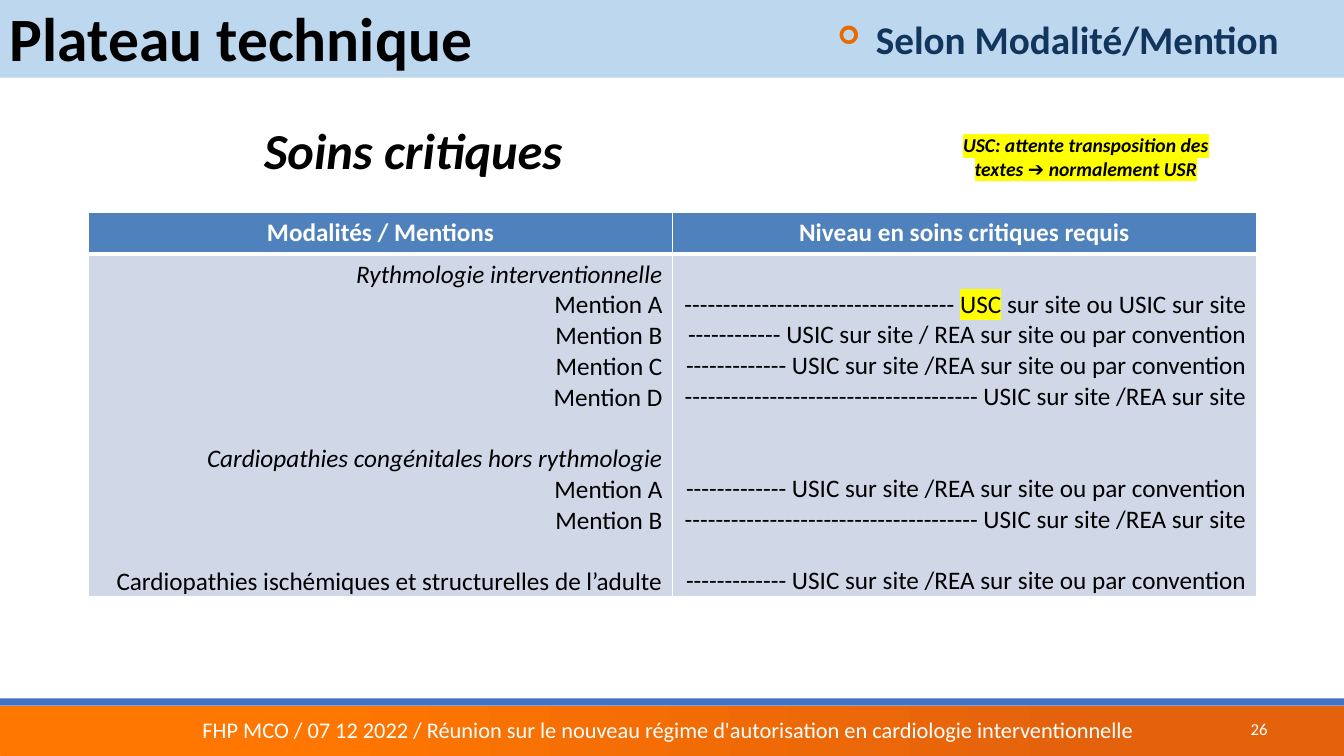
from lxml.etree import SubElement
from pptx import Presentation
from pptx.dml.color import RGBColor
from pptx.enum.shapes import MSO_SHAPE
from pptx.enum.text import MSO_ANCHOR, PP_ALIGN
from pptx.oxml import parse_xml
from pptx.oxml.ns import nsdecls, qn
from pptx.util import Inches, Pt

COLORS = {
    "white": "FFFFFF", "black": "000000", "navy": "12355D",
    "sky": "BDD7EE", "blue": "4472C4", "header": "4F81BD", "body": "D0D8E8",
    "orange": "FF7600", "rust": "E4620C", "bullet": "E96A00", "yellow": "FFFF00",
}
LINE = 22
CONVENTION = "------------- USIC sur site /REA sur site ou par convention"
ON_SITE = "-------------------------------------- USIC sur site /REA sur site"
MENTIONS = [
    ("Rythmologie interventionnelle", 0, True),
    ("Mention A", 0, False),
    ("Mention B", 0, False),
    ("Mention C", 0, False),
    ("Mention D", 0, False),
    ("Cardiopathies congénitales hors rythmologie", 1, True),
    ("Mention A", 0, False),
    ("Mention B", 0, False),
    ("Cardiopathies ischémiques et structurelles de l’adulte", 1, False),
]
LEVELS = [
    ("------------ USIC sur site / REA sur site ou par convention", 0),
    (CONVENTION, 0),
    (ON_SITE, 0),
    (CONVENTION, 2),
    (ON_SITE, 0),
    (CONVENTION, 1),
]


def rgb(name):
    return RGBColor.from_string(COLORS[name])


def add_run(p, text, size=18, color="black", bold=False, italic=False, highlight=None):
    r = p.add_run()
    r.text = text
    r.font.size = Pt(size)
    r.font.bold = bold
    r.font.italic = italic
    r.font.color.rgb = rgb(color)
    if highlight:
        mark = SubElement(r.font._element, qn("a:highlight"))
        SubElement(mark, qn("a:srgbClr"), val=COLORS[highlight])
    r.font.name = "Calibri"


def add_text(s, text, box, align=PP_ALIGN.LEFT, anchor=MSO_ANCHOR.TOP, **font):
    tf = s.shapes.add_textbox(*map(Inches, box)).text_frame
    tf.word_wrap = True
    tf.vertical_anchor = anchor
    p = tf.paragraphs[0]
    p.alignment = align
    add_run(p, text, **font)
    return p


def add_bullet(p, char, color):
    pPr = p._p.get_or_add_pPr()
    pPr.set("marL", str(Inches(0.69)))
    pPr.set("indent", str(Inches(-0.38)))
    SubElement(SubElement(pPr, qn("a:buClr")), qn("a:srgbClr"), val=COLORS[color])
    SubElement(pPr, qn("a:buSzPct"), val="65000")
    SubElement(pPr, qn("a:buFont"), typeface="Wingdings")
    SubElement(pPr, qn("a:buChar"), char=char)


def add_bar(s, box, color, shape=MSO_SHAPE.RECTANGLE):
    sp = s.shapes.add_shape(shape, *map(Inches, box))
    sp.shadow.inherit = False
    sp.line.fill.background()
    sp.fill.solid()
    sp.fill.fore_color.rgb = rgb(color)
    return sp


def add_footer_band(s):
    sp = add_bar(s, (0, 7, 13.33, 0.5), "orange", MSO_SHAPE.ROUNDED_RECTANGLE)
    sp.adjustments[0] = 0.02
    sp.fill.gradient()
    sp.fill.gradient_angle = 0
    stops = [(0.23, "orange"), (0.81, "rust")]
    for stop, (position, color) in zip(sp.fill.gradient_stops, stops):
        stop.position = position
        stop.color.rgb = rgb(color)


def format_cell(cell, color, bottom=1):
    cell.fill.solid()
    cell.fill.fore_color.rgb = rgb(color)
    tcPr = cell._tc.get_or_add_tcPr()
    widths = {"lnL": 1, "lnR": 1, "lnT": 1, "lnB": bottom}
    for i, (side, width) in enumerate(widths.items()):
        tcPr.insert(i, parse_xml(
            f'<a:{side} {nsdecls("a")} w="{Pt(width)}"><a:solidFill>'
            f'<a:srgbClr val="{COLORS["white"]}"/></a:solidFill></a:{side}>'))


def add_line(tf, first=False, gap=0):
    p = tf.paragraphs[0] if first else tf.add_paragraph()
    p.alignment = PP_ALIGN.RIGHT
    if gap:
        p.space_before = Pt(gap * LINE)
    return p


def add_care_table(s):
    box = map(Inches, (0.88, 2.11, 11.58, 3.81))
    table = s.shapes.add_table(2, 2, *box).table
    table.rows[0].height = Inches(0.41)
    table.rows[1].height = Inches(3.4)
    titles = ("Modalités / Mentions", "Niveau en soins critiques requis")
    for col, title in enumerate(titles):
        head, body = table.cell(0, col), table.cell(1, col)
        format_cell(head, "header", bottom=3)
        format_cell(body, "body")
        body.margin_bottom = 0
        p = head.text_frame.paragraphs[0]
        p.alignment = PP_ALIGN.CENTER
        add_run(p, title, color="white", bold=True)

    tf = table.cell(1, 0).text_frame
    for i, (text, gap, italic) in enumerate(MENTIONS):
        add_run(add_line(tf, i == 0, gap), text, italic=italic)

    levels = table.cell(1, 1)
    levels.vertical_anchor = MSO_ANCHOR.BOTTOM
    tf = levels.text_frame
    p = add_line(tf, first=True)
    add_run(p, "----------------------------------- ")
    add_run(p, "USC", highlight="yellow")
    add_run(p, " sur site ou USIC sur site")
    for text, gap in LEVELS:
        add_run(add_line(tf, gap=gap), text)


def main():
    prs = Presentation()
    prs.slide_width = Inches(13.33)
    prs.slide_height = Inches(7.5)
    s = prs.slides.add_slide(prs.slide_layouts[6])

    add_footer_band(s)
    add_text(s, "FHP MCO / 07 12 2022 / Réunion sur le nouveau régime d'autorisation "
             "en cardiologie interventionnelle", (1.91, 7.04, 9.58, 0.39),
             anchor=MSO_ANCHOR.MIDDLE, size=16, color="white")
    add_bar(s, (0, 6.93, 13.33, 0.07), "blue")
    add_bar(s, (-0.02, -0.01, 13.35, 0.78), "sky")
    add_text(s, "26", (11.07, 7.1, 1.6, 0.27), PP_ALIGN.RIGHT,
             MSO_ANCHOR.MIDDLE, size=12, color="white")
    add_text(s, "Plateau technique", (0, -0.01, 12.28, 0.75),
             anchor=MSO_ANCHOR.MIDDLE, size=44, bold=True)
    p = add_text(s, "Selon Modalité/Mention", (5.72, 0.1, 7.06, 1.04),
                 PP_ALIGN.RIGHT, size=28, color="navy", bold=True)
    add_bullet(p, "➢", "bullet")
    add_care_table(s)
    add_text(s, "USC: attente transposition des textes ➔ normalement USR",
             (9.26, 1.27, 3.02, 0.57), PP_ALIGN.CENTER, size=14,
             bold=True, italic=True, highlight="yellow")
    add_text(s, "Soins critiques", (2.52, 1.13, 3.88, 0.71),
             size=36, bold=True, italic=True)
    prs.save("out.pptx")


if __name__ == "__main__":
    main()
